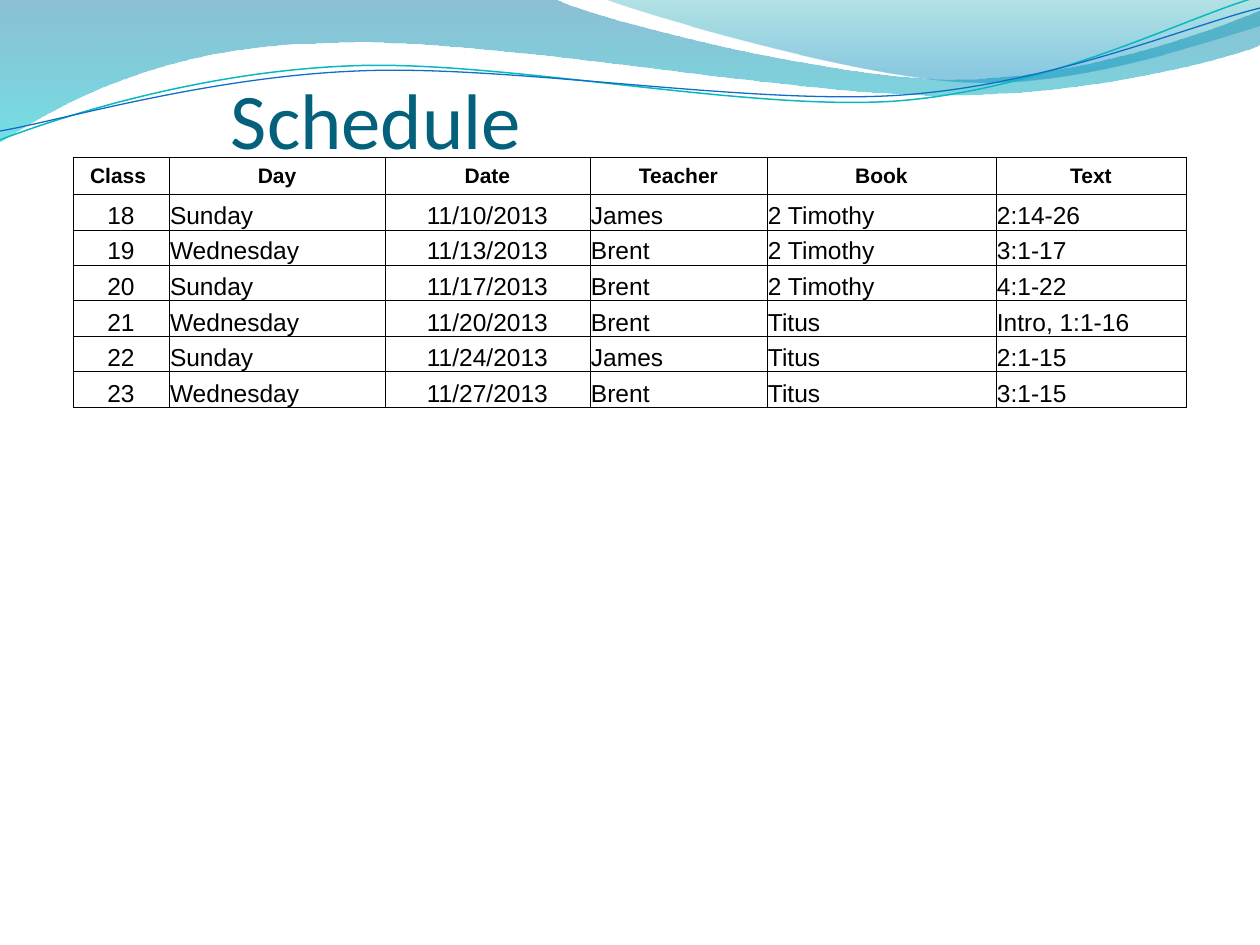
from math import cos, radians, sin

from lxml import etree
from pptx import Presentation
from pptx.dml.color import RGBColor
from pptx.enum.text import MSO_ANCHOR, PP_ALIGN
from pptx.oxml.ns import qn
from pptx.util import Emu, Pt

LEFT, CENTER = PP_ALIGN.LEFT, PP_ALIGN.CENTER
MIDDLE, BOTTOM = MSO_ANCHOR.MIDDLE, MSO_ANCHOR.BOTTOM

SCALE = 914400 / 126
TILT = 357.3

BLACK = RGBColor(0x00, 0x00, 0x00)
TITLE = RGBColor(0x04, 0x61, 0x7B)
DEEP = RGBColor(0x00, 0x74, 0xA1)
CYAN = RGBColor(0x00, 0xC6, 0xCF)
TEAL = RGBColor(0x00, 0xA1, 0xA9)
SKY = RGBColor(0x00, 0x8B, 0xBF)
AQUA = RGBColor(0x0A, 0xB8, 0xBF)
BLUE = RGBColor(0x0F, 0x6F, 0xC6)

# Outlines: one pair is a corner, three pairs are a curve
BACK = [[(0, 0)], [(554, -1)],
        [(600, 21), (837, 79), (955, 79)],
        [(1075, 79), (1207, 33), (1260, 11)],
        [(1261, 45)],
        [(1239, 55), (1096, 96), (940, 95)],
        [(784, 95), (481, 35), (324, 43)],
        [(163, 45), (58, 105), (-1, 142)],
        [(0, 0)]]
FRONT = [[(604, -1)],
         [(641, 14), (859, 78), (969, 82)],
         [(1079, 87), (1211, 40), (1260, 26)],
         [(1260, 0)], [(604, -1)]]
UPPER = [[(0, 140)],
         [(60, 117), (199, 72), (349, 66)],
         [(498, 59), (747, 112), (898, 101)],
         [(1049, 89), (1182, 19), (1257, -3)]]
LOWER = [[(0, 131)],
         [(59, 121), (207, 77), (357, 71)],
         [(508, 64), (752, 106), (903, 95)],
         [(1053, 84), (1187, 26), (1260, 8)]]

COLS = [96, 216, 205, 177, 229, 190]
HIGHS = [37] + [36, 35, 36] * 2
HEADS = ["Class ", "Day", "Date", "Teacher", "Book", "Text"]
ROWS = [
    ["18", "Sunday", "11/10/2013", "James", "2 Timothy", "2:14-26"],
    ["19", "Wednesday", "11/13/2013", "Brent", "2 Timothy", "3:1-17"],
    ["20", "Sunday", "11/17/2013", "Brent", "2 Timothy", "4:1-22"],
    ["21", "Wednesday", "11/20/2013", "Brent", "Titus", "Intro, 1:1-16"],
    ["22", "Sunday", "11/24/2013", "James", "Titus", "2:1-15"],
    ["23", "Wednesday", "11/27/2013", "Brent", "Titus", "3:1-15"],
]
MIDS = (0, 2)  # centred columns


def px(n):
    return Emu(round(n * SCALE))


def turn(parts, mid, angle):
    """Turn an outline clockwise about a middle."""
    c, s = cos(radians(angle)), sin(radians(angle))
    mx, my = mid
    return [[(mx + (x - mx) * c - (y - my) * s,
              my + (x - mx) * s + (y - my) * c) for x, y in part]
            for part in parts]


def draw(slide, parts, close):
    pts = [(px(x), px(y)) for part in parts for x, y in part]
    pen = slide.shapes.build_freeform(*pts[0], scale=1.0)
    pen.add_line_segments(pts[1:], close=close)
    shape = pen.convert_to_shape()
    shape.shadow.inherit = False
    # Join each run of three segments into one curve
    segs = iter(list(shape.element.iter(qn("a:lnTo"))))
    for part in parts[1:]:
        group = [next(segs) for _ in part]
        if len(group) == 3:
            bend = etree.Element(qn("a:cubicBezTo"))
            group[0].addprevious(bend)
            for seg in group:
                bend.append(seg[0])
                seg.getparent().remove(seg)
    return shape


def add_wave(slide, parts, stops):
    shape = draw(slide, parts, True)
    shape.line.fill.background()
    shape.fill.gradient()
    shape.fill.gradient_angle = 270
    marks = shape.element.iter(qn("a:gs"))
    for stop, mark, (pos, color, alpha) in zip(
            shape.fill.gradient_stops, marks, stops):
        stop.position = pos
        stop.color.rgb = color
        etree.SubElement(mark[0], qn("a:alpha"), val=str(alpha * 1000))


def add_curve(slide, parts, mid, color, width):
    shape = draw(slide, turn(parts, mid, -TILT), False)
    shape.rotation = TILT
    shape.fill.background()
    shape.line.color.rgb = color
    shape.line.width = Pt(width)


def put_text(frame, text, *, size, font, color, bold=False, align=LEFT):
    para = frame.paragraphs[0]
    para.alignment = align
    run = para.add_run()
    run.text = text
    run.font.size = Pt(size)
    run.font.name = font
    run.font.bold = bold
    run.font.color.rgb = color


def set_pads(box, left, top, right, bottom):
    box.margin_left, box.margin_top = px(left), px(top)
    box.margin_right, box.margin_bottom = px(right), px(bottom)


def add_title(slide, text):
    box = slide.shapes.add_textbox(px(231), px(63), px(1134), px(102))
    frame = box.text_frame
    frame.word_wrap = True
    frame.vertical_anchor = BOTTOM
    set_pads(frame, 0, 6, 0, 0)
    put_text(frame, text, size=45, font="Calibri", color=TITLE)


def add_edges(cell):
    props = cell._tc.get_or_add_tcPr()
    for side in ("lnL", "lnR", "lnT", "lnB"):
        line = etree.SubElement(props, qn("a:" + side), w=str(Pt(0.5)))
        fill = etree.SubElement(line, qn("a:solidFill"))
        etree.SubElement(fill, qn("a:srgbClr"), val=str(BLACK))


def add_grid(slide):
    data = [HEADS] + ROWS
    table = slide.shapes.add_table(
        len(data), len(COLS), px(73), px(157),
        px(sum(COLS)), px(sum(HIGHS))).table
    table.first_row = table.horz_banding = False
    for col, wide in zip(table.columns, COLS):
        col.width = px(wide)
    for r, (texts, high) in enumerate(zip(data, HIGHS)):
        table.rows[r].height = px(high)
        head = r == 0
        for c, text in enumerate(texts):
            cell = table.cell(r, c)
            add_edges(cell)
            cell.fill.background()
            set_pads(cell, 1, 1, 1, 0)
            cell.vertical_anchor = MIDDLE if head else BOTTOM
            put_text(cell.text_frame, text, size=12 if head else 14,
                     font="Arial", color=BLACK, bold=head,
                     align=CENTER if head or c in MIDS else LEFT)


def main():
    prs = Presentation()
    prs.slide_width, prs.slide_height = px(1260), px(945)
    slide = prs.slides.add_slide(prs.slide_layouts[6])

    # Waves along the top
    add_wave(slide, BACK, [(0, DEEP, 45), (1, CYAN, 55)])
    add_wave(slide, FRONT, [(0, TEAL, 30), (0.8, SKY, 45)])
    add_curve(slide, UPPER, (629, 72), AQUA, 0.85)
    add_curve(slide, LOWER, (629, 74), BLUE, 0.75)

    # Heading and class list
    add_title(slide, "Schedule")
    add_grid(slide)

    prs.save("out.pptx")


if __name__ == "__main__":
    main()
